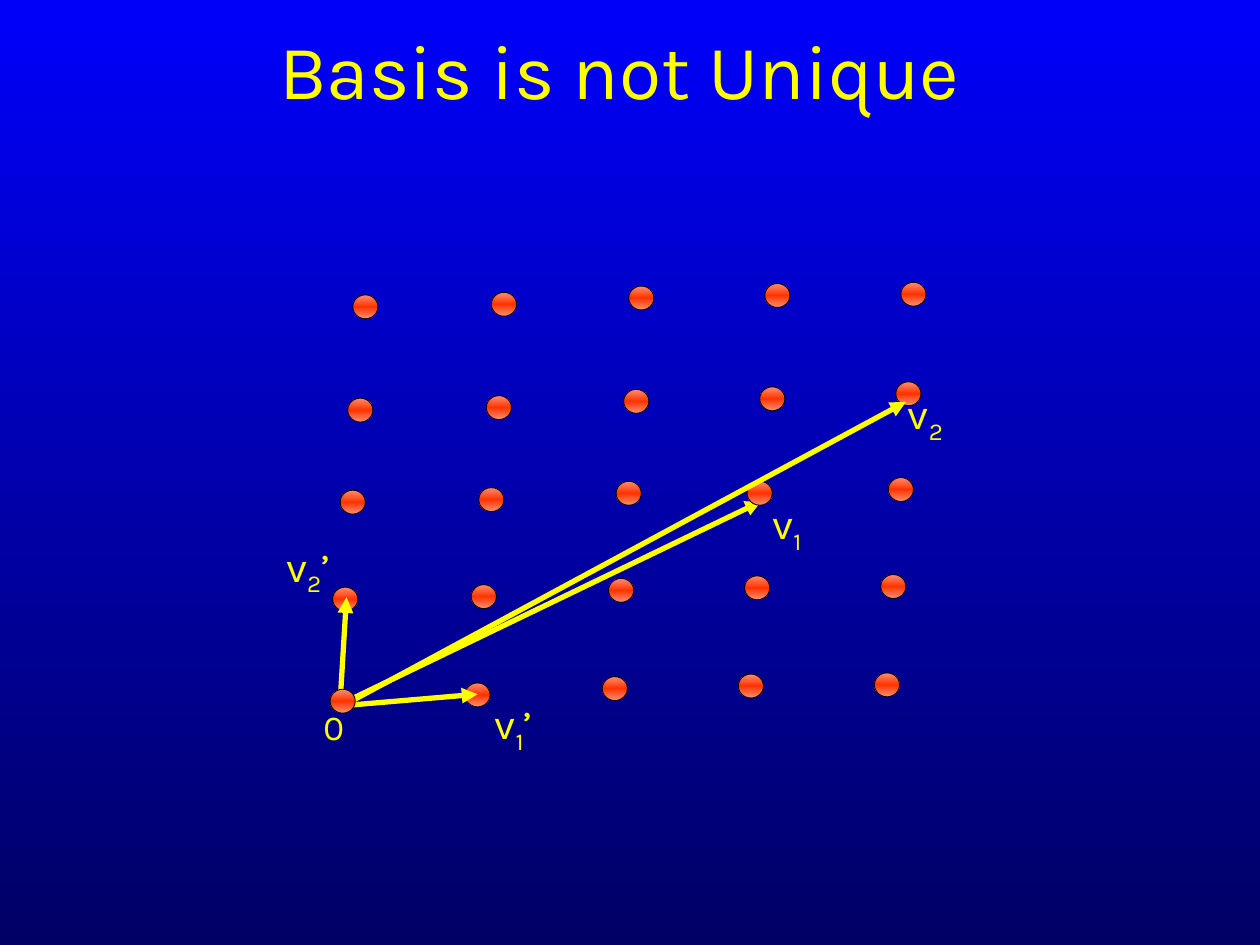
from dataclasses import dataclass
from itertools import product

from lxml.etree import SubElement as Sub
from pptx import Presentation as Deck
from pptx.dml.color import RGBColor as Color
from pptx.enum.shapes import MSO_CONNECTOR as Link, MSO_SHAPE as Form
from pptx.enum.text import MSO_ANCHOR as Anchor, MSO_AUTO_SIZE as Auto, PP_ALIGN as Align
from pptx.oxml.ns import qn
from pptx.util import Inches, Pt

HUES = {"ink": "FFFF00", "edge": "000000", "low": "000064", "high": "0000FA",
        "rim": "FE8F73", "core": "FF3300"}
FONT = "Karla"
WIDE, TALL = 100, 75
CELL = Inches(10) // WIDE
DOT = (2, 1.9)
COLS = ((0, 0), (11, -0.2), (21.9, -0.7), (32.7, -0.9), (43.5, -1))
ROWS = ((25.9, 54.4), (26.4, 46.6), (27, 38.9), (27.6, 31.6), (28, 23.4))
NUDGE = {(0, 0): (0.3, 0.3), (3, 2): (-0.4, 0.2), (4, 3): (0, -0.3)}
ZERO, TIPS = (0, 0), ((3, 2), (4, 3))


@dataclass
class Arrow:
    start: tuple[float, float]
    end: tuple[float, float]


@dataclass
class Label:
    box: tuple[float, float, float, float]
    runs: tuple[tuple[str, bool], ...]
    size: int = 24
    title: bool = False


def grid(*cells: float) -> list[int]:
    return [round(n * CELL) for n in cells]


def hue(name: str) -> Color:
    return Color.from_string(HUES[name])


def blend(fill, root, names: tuple[str, ...]) -> None:
    fill.gradient()
    fill.gradient_angle = 90
    stops = next(root.iter(qn("a:gsLst")))
    for old in list(stops):
        stops.remove(old)
    for i, name in enumerate(names):
        stop = Sub(stops, qn("a:gs"), pos=str(100000 * i // (len(names) - 1)))
        Sub(stop, qn("a:srgbClr"), val=HUES[name])


def add_dot(group, spot: tuple[int, int]) -> None:
    col, row = spot
    parts = zip(COLS[col], ROWS[row], NUDGE.get(spot, (0, 0)))
    dot = group.shapes.add_shape(Form.OVAL, *grid(*map(sum, parts), *DOT))
    dot.shadow.inherit = False
    blend(dot.fill, dot._element, ("rim", "core", "rim"))
    dot.line.color.rgb = hue("edge")
    dot.line.width = Pt(0.5)


def add_arrow(group, arrow: Arrow) -> None:
    line = group.shapes.add_connector(Link.STRAIGHT, *grid(*arrow.start, *arrow.end))
    line.line.color.rgb = hue("ink")
    line.line.width = Pt(3)
    Sub(line.line._get_or_add_ln(), qn("a:tailEnd"), type="triangle")
    Sub(line._element.spPr, qn("a:effectLst"))


def add_label(owner, label: Label) -> None:
    frame = owner.shapes.add_textbox(*grid(*label.box)).text_frame
    frame.word_wrap = True
    frame.auto_size = Auto.NONE if label.title else Auto.SHAPE_TO_FIT_TEXT
    frame.vertical_anchor = Anchor.MIDDLE if label.title else Anchor.TOP
    para = frame.paragraphs[0]
    para.alignment = Align.CENTER
    for text, sub in label.runs:
        run = para.add_run()
        run.text = text
        run.font.name, run.font.size = FONT, Pt(label.size)
        run.font.color.rgb = hue("ink")
        if sub:
            run.font._element.set("baseline", "-25000")


def vector(left: float, top: float, index: str, prime: str = "") -> Label:
    runs = (("v", False), (index, True)) + (((prime, False),) if prime else ())
    return Label((left, top, 18.9, 5.1), runs)


def main() -> None:
    """Draw a lattice of points with two of its bases."""
    deck = Deck()
    deck.slide_width, deck.slide_height = grid(WIDE, TALL)
    slide = deck.slides.add_slide(deck.slide_layouts[6])
    blend(slide.background.fill, slide._element, ("low", "high"))
    add_label(slide, Label((1.7, -0.8, 95, 12.5), (("Basis is not Unique", False),), 44, True))

    group = slide.shapes.add_group_shape()
    for spot in product(range(len(COLS)), range(len(ROWS))):
        if spot != ZERO and spot not in TIPS:
            add_dot(group, spot)
    add_arrow(group, Arrow((26.4, 56.2), (60.4, 39.8)))
    add_label(group, Label((21.5, 55.5, 10, 4.4), (("0", False),), 20))
    for spot in TIPS:
        add_dot(group, spot)
    for arrow in (Arrow((27.8, 55.7), (71.9, 31.9)), Arrow((27.3, 56), (37.9, 55.1)),
                  Arrow((27, 55.6), (27.5, 47.4))):
        add_arrow(group, arrow)
    for label in (vector(64, 30.3, "2"), vector(53, 39, "1"),
                  vector(31.3, 54.9, "1", "’"), vector(15, 42.4, "2", "’")):
        add_label(group, label)
    add_dot(group, ZERO)
    deck.save("out.pptx")


if __name__ == "__main__":
    main()
